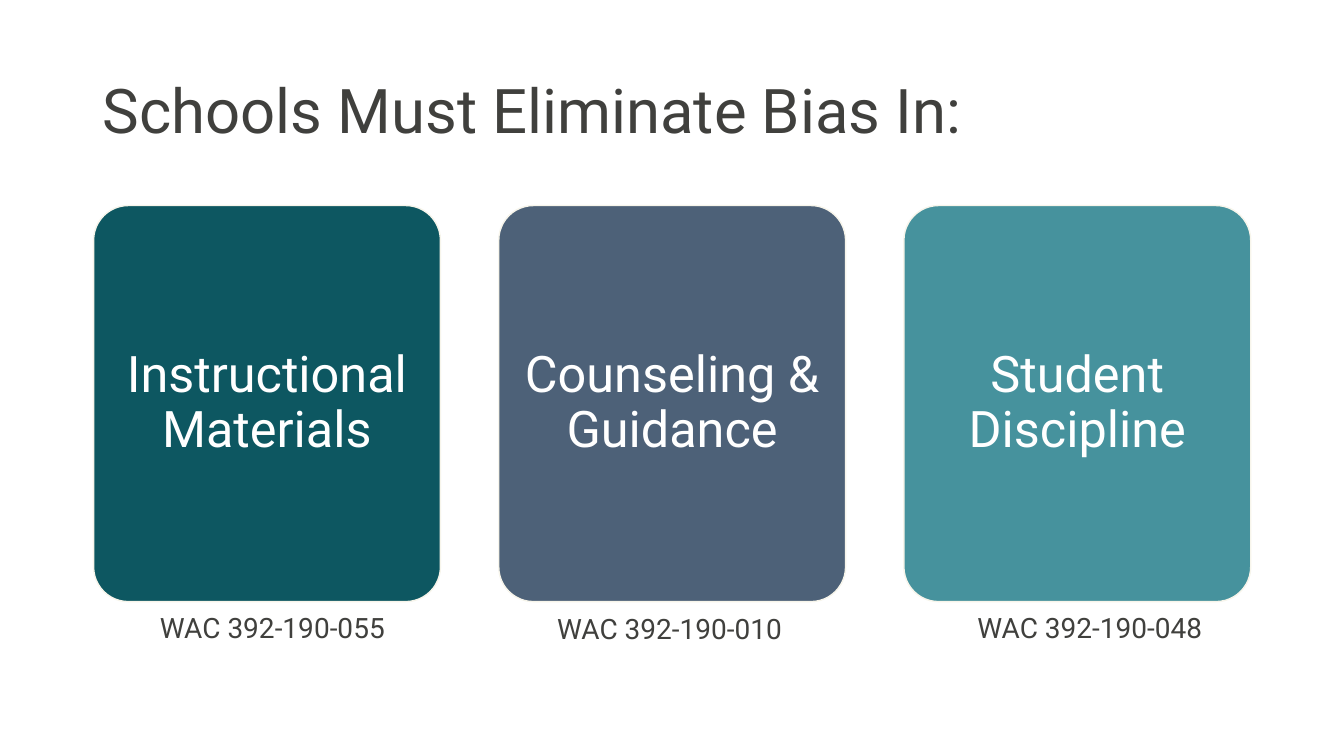
from dataclasses import dataclass

from pptx import Presentation
from pptx.dml.color import RGBColor
from pptx.enum import shapes, text
from pptx.util import Cm, Pt

TITLE = "Schools Must Eliminate Bias In:"

# topic, card colour, rule, caption (left, top, width) in cm
AREAS = [
    ("Instructional Materials", "0D5761", "WAC 392-190-055", (3.78, 15.27, 6.27)),
    ("Counseling & Guidance", "4D6178", "WAC 392-190-010", (13.79, 15.29, 6.27)),
    ("Student Discipline", "46929D", "WAC 392-190-048", (24.38, 15.27, 6.5)),
]


@dataclass(frozen=True)
class Theme:
    font: str = "Roboto"
    dark: str = "40403D"
    light: str = "FFFFFF"
    outline: str = "F7F5EB"
    title_size: int = 44
    card_size: int = 36
    caption_size: int = 20


THEME = Theme()
CARD_LEFT, CARD_TOP, CARD_WIDTH, CARD_HEIGHT = 2.36, 5.18, 8.74, 9.98
CARD_PITCH = 10.21
CARD_INSET = Cm(0.38)
CAPTION_HEIGHT = 1.12


def apply_format(target, values):
    for name, value in values.items():
        setattr(target, name, value)


def write(shape, content, size, color, frame_format, paragraph_format):
    """Fill a shape with one formatted paragraph."""
    frame = shape.text_frame
    apply_format(frame, {"word_wrap": True, **frame_format})
    paragraph = frame.paragraphs[0]
    paragraph.text = content
    apply_format(paragraph, paragraph_format)
    font = paragraph.runs[0].font
    apply_format(font, {"name": THEME.font, "size": Pt(size)})
    font.color.rgb = RGBColor.from_string(color)


def add_title(slide):
    title = slide.shapes.title
    apply_format(title, {"left": Cm(2.34), "top": Cm(1.02),
                         "width": Cm(29.21), "height": Cm(3.68)})
    write(title, TITLE, THEME.title_size, THEME.dark,
          {"vertical_anchor": text.MSO_ANCHOR.MIDDLE,
           "auto_size": text.MSO_AUTO_SIZE.NONE},
          {"alignment": text.PP_ALIGN.LEFT, "line_spacing": 0.9})


def add_card(slide, index, topic, color):
    left = CARD_LEFT + index * CARD_PITCH
    card = slide.shapes.add_shape(
        shapes.MSO_SHAPE.ROUNDED_RECTANGLE,
        Cm(left), Cm(CARD_TOP), Cm(CARD_WIDTH), Cm(CARD_HEIGHT))
    card.adjustments[0] = 0.1
    card.shadow.inherit = False
    card.fill.solid()
    card.fill.fore_color.rgb = RGBColor.from_string(color)
    card.line.color.rgb = RGBColor.from_string(THEME.outline)
    card.line.width = Pt(1)
    insets = {f"margin_{side}": CARD_INSET
              for side in ("left", "top", "right", "bottom")}
    write(card, topic, THEME.card_size, THEME.light,
          {"vertical_anchor": text.MSO_ANCHOR.MIDDLE, **insets},
          {"alignment": text.PP_ALIGN.CENTER, "line_spacing": 0.9})


def add_caption(slide, rule, place):
    left, top, width = place
    caption = slide.shapes.add_textbox(
        Cm(left), Cm(top), Cm(width), Cm(CAPTION_HEIGHT))
    write(caption, rule, THEME.caption_size, THEME.dark,
          {"auto_size": text.MSO_AUTO_SIZE.SHAPE_TO_FIT_TEXT},
          {"alignment": text.PP_ALIGN.LEFT})


def main():
    presentation = Presentation()
    apply_format(presentation, {"slide_width": Cm(33.87), "slide_height": Cm(19.05)})
    slide = presentation.slides.add_slide(presentation.slide_layouts[5])
    add_title(slide)
    for index, (topic, color, rule, place) in enumerate(AREAS):
        add_card(slide, index, topic, color)
        add_caption(slide, rule, place)
    presentation.save("out.pptx")


if __name__ == "__main__":
    main()
